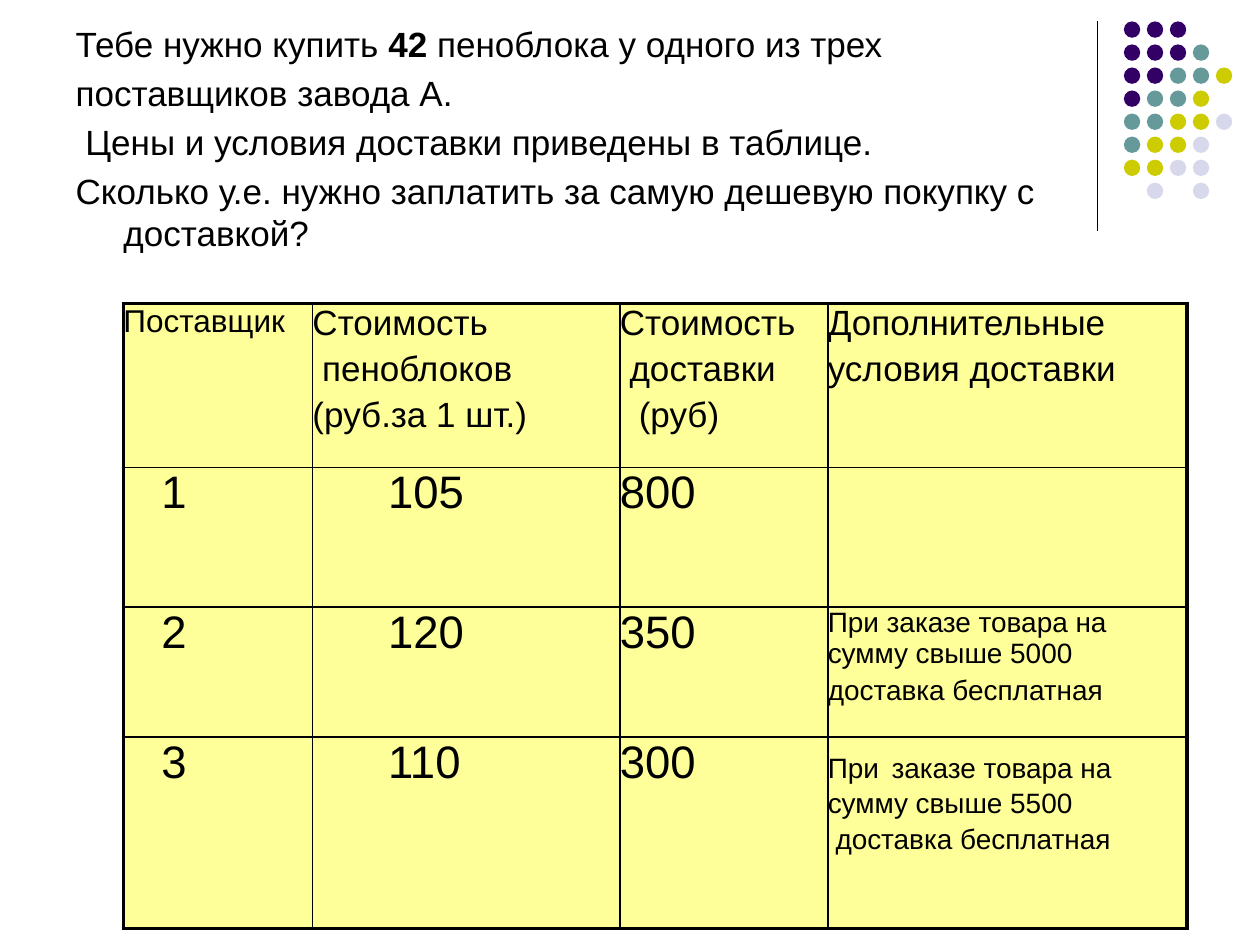
from lxml.etree import SubElement
from pptx import Presentation
from pptx.dml.color import RGBColor as Rgb
from pptx.enum.shapes import MSO_CONNECTOR as Conn, MSO_SHAPE as Shape
from pptx.enum.text import MSO_ANCHOR as Anchor, MSO_AUTO_SIZE as Fit, PP_ALIGN as Align
from pptx.oxml.ns import qn
from pptx.util import Inches, Pt

BLACK = Rgb(0x00, 0x00, 0x00)
CREAM = Rgb(0xFF, 0xFF, 0x99)
TINTS = {
    "P": Rgb(0x33, 0x00, 0x66),
    "T": Rgb(0x66, 0x99, 0x99),
    "Y": Rgb(0xCC, 0xCC, 0x00),
    "L": Rgb(0xD8, 0xD8, 0xEC),
}
DOTS = ["PPP", "PPPT", "PPTTY", "PTTY", "TTYYL", "TYYL", "YYLL", " L L"]
DOT = 0.13

TASK = [
    ("Тебе нужно купить ", "42 ", "пеноблока у одного из трех"),
    ("поставщиков завода А.",),
    (" Цены и условия доставки приведены в таблице.",),
    ("Сколько у.е. нужно заплатить за самую дешевую покупку с доставкой?",),
]
HEADS = [
    [("Поставщик",)],
    [("Стоимость",), (" пеноблоков",), ("(руб.за 1 шт.)",)],
    [("Стоимость",), (" доставки",), ("(руб)",)],
    [("Дополнительные",), ("условия доставки",)],
]
OFFERS = [
    ("1", "105", "800", []),
    ("2", "120", "350",
     [("При заказе товара на сумму свыше 5000",), ("доставка бесплатная",)]),
    ("3", "110", "300",
     [("При", " ", "заказе товара на сумму свыше 5500",), (" доставка бесплатная",)]),
]
COLS = [1.5, 2.44, 1.65, 2.85]
ROWS = [1.3, 1.11, 1.03, 1.52]


def write(frame, lines, size, left=0, first=0):
    frame.word_wrap = True
    for i, runs in enumerate(lines or [()]):
        para = frame.paragraphs[0] if i == 0 else frame.add_paragraph()
        para.alignment = Align.LEFT
        para.line_spacing = 1.0
        para.space_before = Pt(size * 0.2 if i else 0)
        para.font.name = "Arial"
        para.font.size = Pt(size)
        para.font.color.rgb = BLACK
        props = para._p.get_or_add_pPr()
        props.set("marL", str(Inches(left)))
        props.set("indent", str(Inches(first)))
        for text in runs:
            para.add_run().text = text


def add_dots(slide, x, y, w, h):
    group = slide.shapes.add_group_shape()
    across = (w - DOT) / (max(map(len, DOTS)) - 1)
    down = (h - DOT) / (len(DOTS) - 1)
    for r, row in enumerate(DOTS):
        for c, tint in enumerate(row):
            if tint == " ":
                continue
            dot = group.shapes.add_shape(
                Shape.OVAL, Inches(x + c * across), Inches(y + r * down),
                Inches(DOT), Inches(DOT))
            dot.shadow.inherit = False
            dot.fill.solid()
            dot.fill.fore_color.rgb = TINTS[tint]
            dot.line.fill.background()


def add_rule(slide, x, top, end):
    rule = slide.shapes.add_connector(
        Conn.STRAIGHT, Inches(x), Inches(top), Inches(x), Inches(end))
    rule.line.color.rgb = BLACK
    rule.line.width = Pt(0.75)
    SubElement(rule._element.spPr, qn("a:effectLst"))


def add_task(slide, x, y, w, h):
    title = slide.shapes.title
    title._element.getparent().remove(title._element)
    body = slide.placeholders[1]
    body.left, body.top = Inches(x), Inches(y)
    body.width, body.height = Inches(w), Inches(h)
    frame = body.text_frame
    frame.auto_size = Fit.NONE
    frame.vertical_anchor = Anchor.TOP
    write(frame, TASK, 20, 0.38, -0.38)
    for para in frame.paragraphs:
        mark = SubElement(para._p.pPr, qn("a:buNone"))
        para._p.pPr.find(qn("a:defRPr")).addprevious(mark)
    frame.paragraphs[0].runs[1].font.bold = True


def edge(cell, thick):
    props = cell._tc.get_or_add_tcPr()
    for i, side in enumerate("LRTB"):
        line = SubElement(props, qn("a:ln" + side))
        line.set("w", str(Pt(2.25 if side in thick else 1)))
        fill = SubElement(line, qn("a:solidFill"))
        SubElement(fill, qn("a:srgbClr")).set("val", str(BLACK))
        props.insert(i, line)


def add_grid(slide, x, y, w, h):
    table = slide.shapes.add_table(
        len(ROWS), len(COLS), Inches(x), Inches(y), Inches(w), Inches(h)).table
    for col, share in zip(table.columns, COLS):
        col.width = Inches(w * share / sum(COLS))
    for row, share in zip(table.rows, ROWS):
        row.height = Inches(h * share / sum(ROWS))
    for r in range(len(ROWS)):
        for c in range(len(COLS)):
            cell = table.cell(r, c)
            cell.margin_left = cell.margin_right = 0
            cell.margin_top = cell.margin_bottom = 0
            cell.fill.solid()
            cell.fill.fore_color.rgb = CREAM
            sides = {"L": c == 0, "R": c == len(COLS) - 1,
                     "T": r == 0, "B": r == len(ROWS) - 1}
            edge(cell, [side for side, outer in sides.items() if outer])
            if r == 0:
                write(cell.text_frame, HEADS[c], 20 if c else 18)
            elif c == 3:
                write(cell.text_frame, OFFERS[r - 1][c], 16)
            else:
                write(cell.text_frame, [(OFFERS[r - 1][c],)], 26, (0.3, 0.6, 0)[c])
    unit = table.cell(0, 2).text_frame.paragraphs[2]
    unit._p.pPr.set("marL", str(Inches(0.15)))
    table.cell(3, 3).text_frame.paragraphs[0].runs[1].font.size = Pt(26)


def main():
    deck = Presentation()
    deck.slide_width, deck.slide_height = Inches(10), Inches(7.5)
    slide = deck.slides.add_slide(deck.slide_layouts[1])
    add_rule(slide, 8.71, 0.17, 1.83)
    add_dots(slide, 8.92, 0.17, 0.86, 1.41)
    add_task(slide, 0.5, 0.13, 8.99, 2.05)
    add_grid(slide, 0.98, 2.41, 8.44, 4.96)
    deck.save("out.pptx")


if __name__ == "__main__":
    main()
